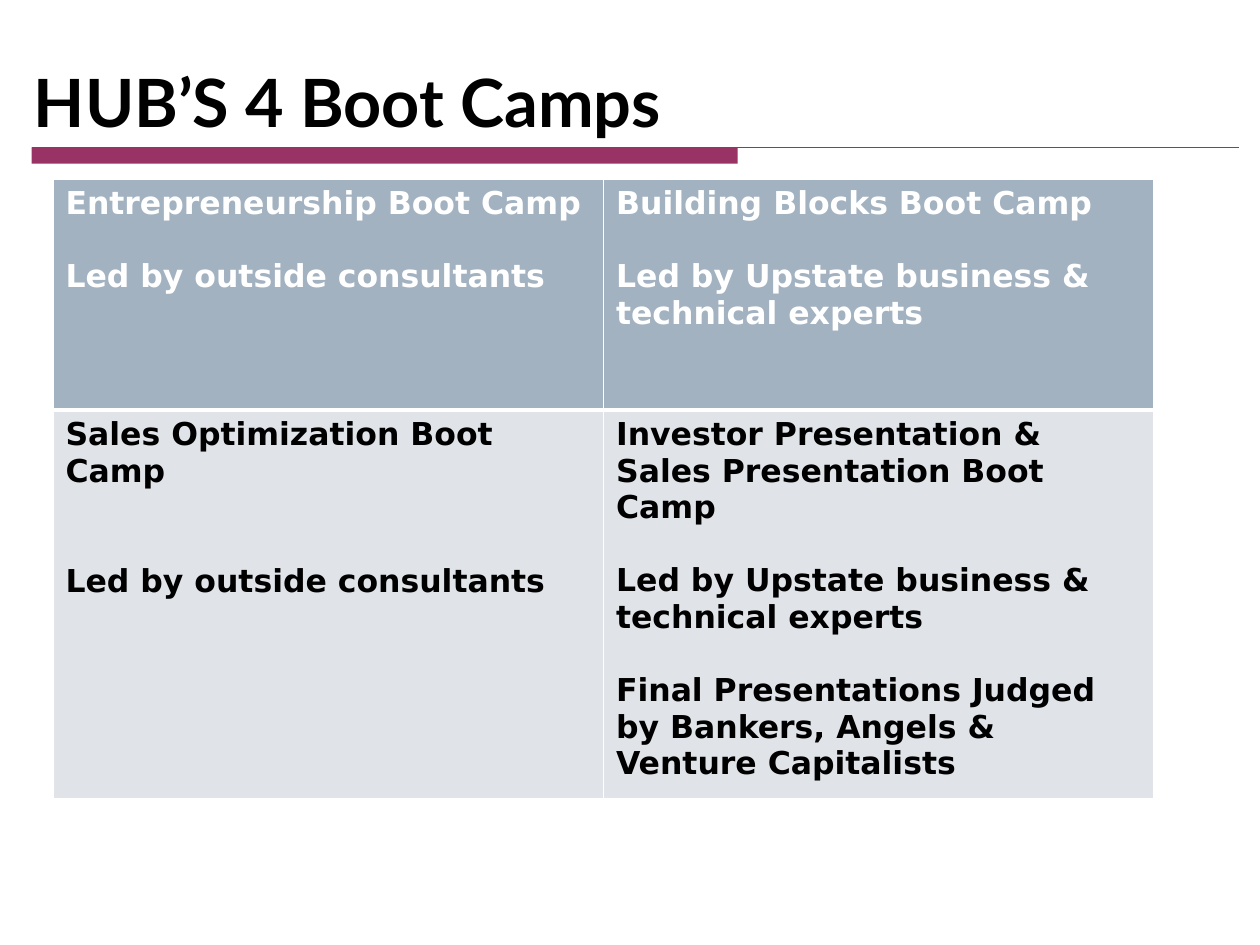
from lxml import etree
from pptx import Presentation
from pptx.dml.color import RGBColor
from pptx.enum.shapes import MSO_CONNECTOR, MSO_SHAPE
from pptx.enum.text import MSO_ANCHOR
from pptx.oxml.ns import qn
from pptx.util import Inches, Pt

STRAIGHT = MSO_CONNECTOR.STRAIGHT
RECTANGLE = MSO_SHAPE.RECTANGLE
BOTTOM = MSO_ANCHOR.BOTTOM

PLUM = RGBColor(0x99, 0x33, 0x66)
BLACK = RGBColor(0, 0, 0)
WHITE = RGBColor(0xFF, 0xFF, 0xFF)
HEADER_BLUE = RGBColor(0xA3, 0xB2, 0xC1)
PALE_GREY = RGBColor(0xE0, 0xE4, 0xE9)

TITLE_FONT, TITLE_SIZE = "Lato", Pt(38)
BODY_FONT, BODY_SIZE = "DejaVu Sans", Pt(18)
LINE_HEIGHT = 20.95  # points, one body line
ROW_SHARES = (0.38, 0.62)
BAR_SHARE = 0.585

# Each cell lists (text, blank lines before it).
BOOT_CAMPS = [
    [
        [("Entrepreneurship Boot Camp", 0), ("Led by outside consultants", 1)],
        [("Building Blocks Boot Camp", 0),
         ("Led by Upstate business & technical experts", 1)],
    ],
    [
        [("Sales Optimization Boot Camp", 0), ("Led by outside consultants", 2)],
        [("Investor Presentation & Sales Presentation Boot Camp", 0),
         ("Led by Upstate business & technical experts", 1),
         ("Final Presentations Judged by Bankers, Angels & Venture Capitalists", 1)],
    ],
]


def format_bold(paragraph, name, size, color):
    for run in paragraph.runs:
        run.font.name = name
        run.font.size = size
        run.font.bold = True
        run.font.color.rgb = color


def add_title(slide, text, left, top, width, height):
    box = slide.shapes.add_textbox(left, top, width, height)
    frame = box.text_frame
    frame.word_wrap = True
    frame.vertical_anchor = BOTTOM
    frame.text = text
    format_bold(frame.paragraphs[0], TITLE_FONT, TITLE_SIZE, BLACK)


def add_title_rule(slide, left, top, width, height):
    """Draw a thin rule with a thick bar hanging from its left part."""
    bar = slide.shapes.add_shape(RECTANGLE, left, top, int(width * BAR_SHARE), height)
    bar.shadow.inherit = False
    bar.fill.solid()
    bar.fill.fore_color.rgb = PLUM
    bar.line.fill.background()
    rule = slide.shapes.add_connector(STRAIGHT, left, top, left + width, top)
    rule.line.color.rgb = PLUM
    rule.line.width = Pt(0.75)
    etree.SubElement(rule._element.spPr, qn("a:effectLst"))


def set_borders(cell, widths):
    """Give the cell white borders; widths maps side letters to points."""
    properties = cell._tc.get_or_add_tcPr()
    for side, width in widths.items():
        line = etree.SubElement(properties, qn(f"a:ln{side}"), w=str(Pt(width)))
        fill = etree.SubElement(line, qn("a:solidFill"))
        etree.SubElement(fill, qn("a:srgbClr"), val=str(WHITE))


def fill_cell(cell, items, fill_color, text_color):
    cell.fill.solid()
    cell.fill.fore_color.rgb = fill_color
    frame = cell.text_frame
    frame.text = "\n".join(text for text, _ in items)
    for paragraph, (_, gap) in zip(frame.paragraphs, items):
        if gap:
            paragraph.space_before = Pt(gap * LINE_HEIGHT)
        format_bold(paragraph, BODY_FONT, BODY_SIZE, text_color)


def add_camp_table(slide, left, top, width, height):
    table = slide.shapes.add_table(
        len(BOOT_CAMPS), len(BOOT_CAMPS[0]), left, top, width, height).table
    for row, share in zip(table.rows, ROW_SHARES):
        row.height = int(height * share)
    for row_index, camps in enumerate(BOOT_CAMPS):
        is_header = row_index == 0
        colors = (HEADER_BLUE, WHITE) if is_header else (PALE_GREY, BLACK)
        widths = {"L": 1, "R": 1, "T": 1 if is_header else 3, "B": 3 if is_header else 1}
        for column_index, items in enumerate(camps):
            cell = table.cell(row_index, column_index)
            set_borders(cell, widths)
            fill_cell(cell, items, *colors)


def main():
    presentation = Presentation()
    presentation.slide_width = Inches(10)
    presentation.slide_height = Inches(7.5)
    slide = presentation.slides.add_slide(presentation.slide_layouts[6])
    add_title_rule(slide, Inches(0.25), Inches(1.17), Inches(9.58), Inches(0.13))
    add_title(slide, "HUB’S 4 Boot Camps",
              Inches(0.17), Inches(0.25), Inches(9.42), Inches(0.92))
    add_camp_table(slide, Inches(0.42), Inches(1.42), Inches(8.74), Inches(4.83))
    presentation.save("out.pptx")


if __name__ == "__main__":
    main()
